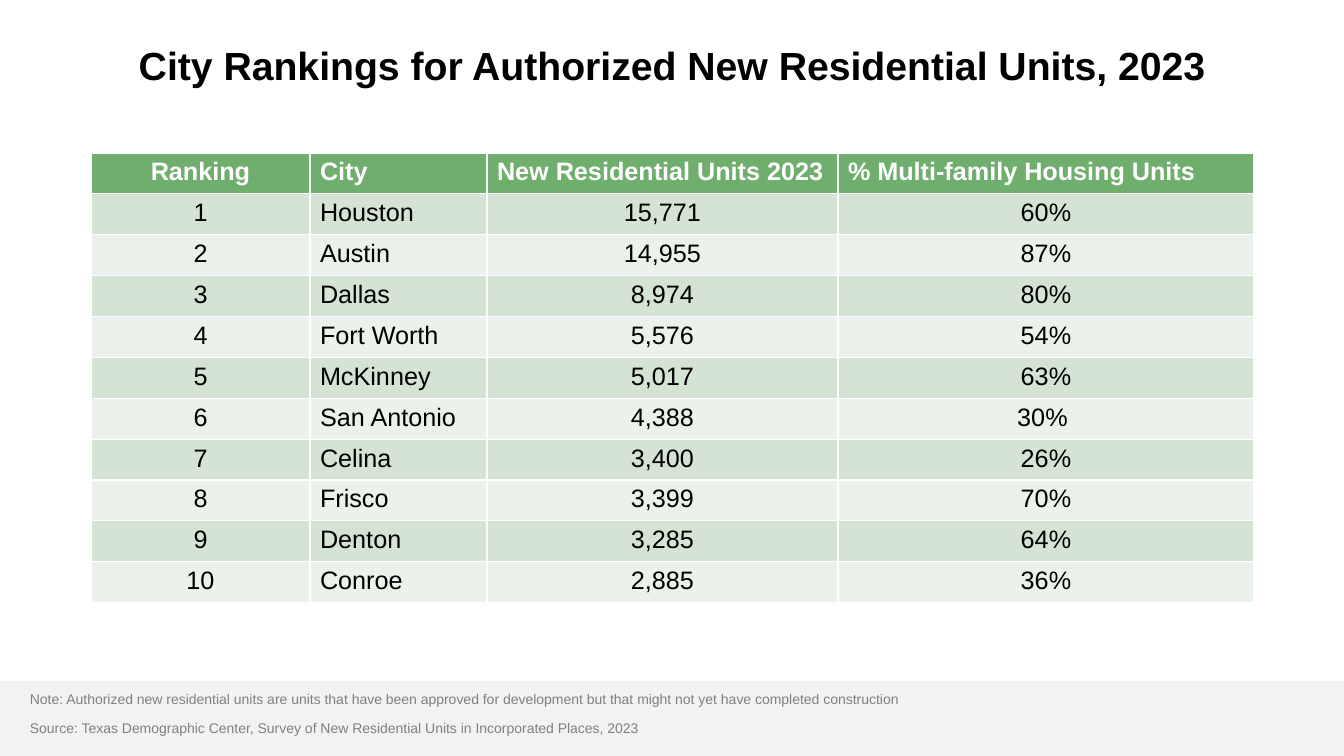
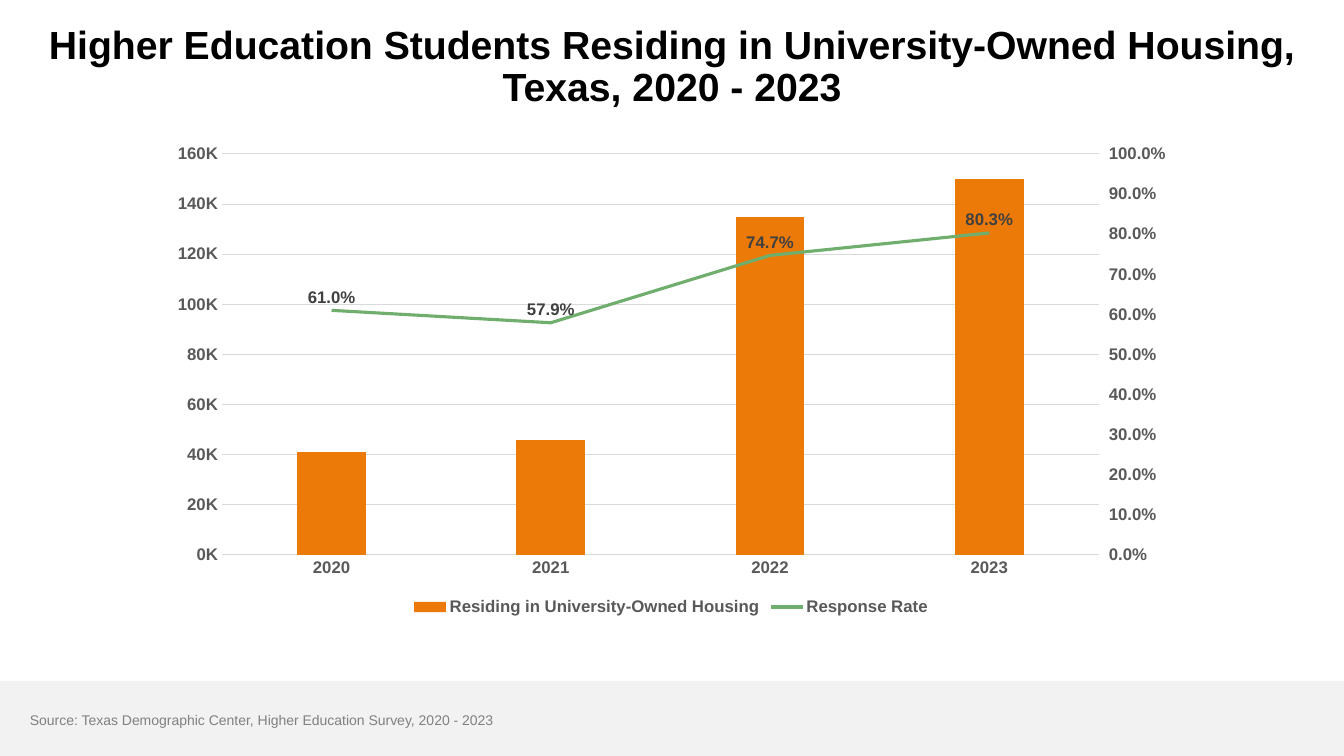
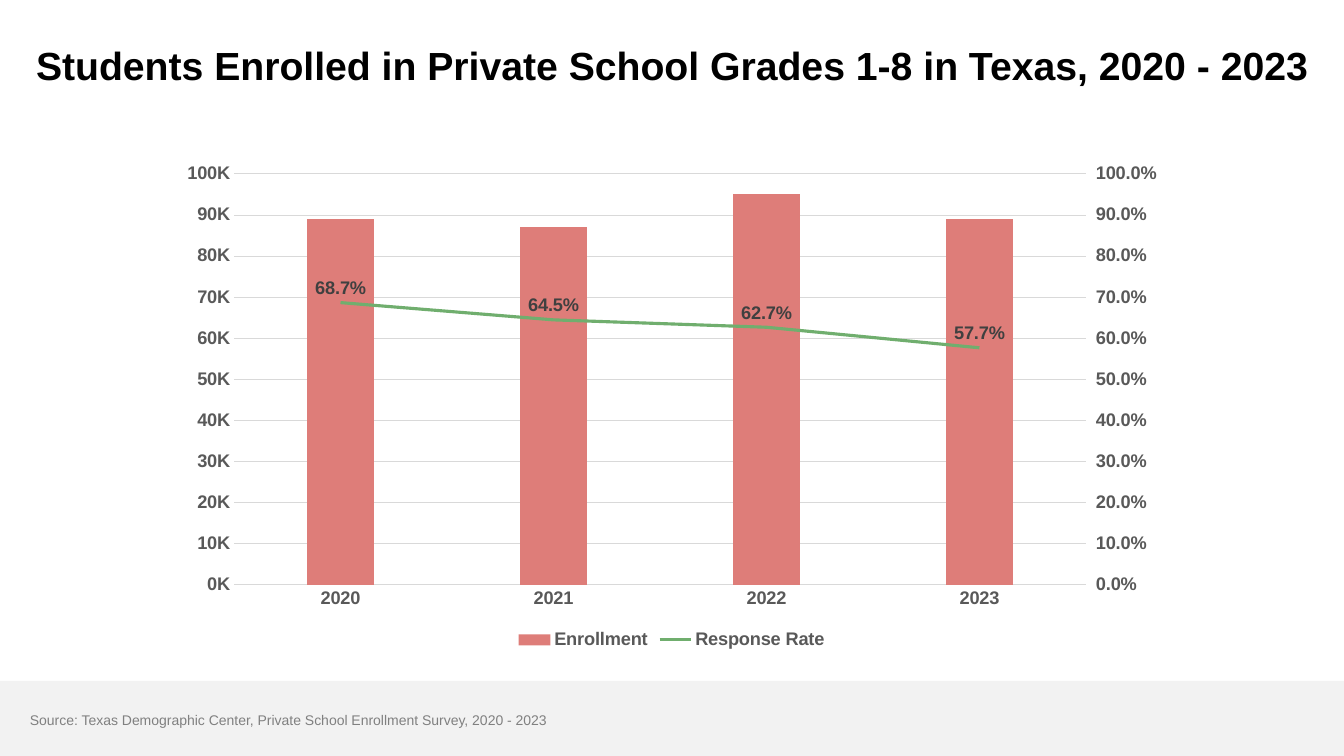
from copy import deepcopy

from lxml import etree
from pptx import Presentation
from pptx.chart.axis import CategoryAxis, ValueAxis
from pptx.chart.data import CategoryChartData
from pptx.dml.color import RGBColor
from pptx.enum.chart import (XL_CHART_TYPE, XL_LABEL_POSITION, XL_LEGEND_POSITION,
                             XL_MARKER_STYLE, XL_TICK_MARK)
from pptx.enum.shapes import MSO_SHAPE
from pptx.enum.text import MSO_ANCHOR, PP_ALIGN
from pptx.oxml import parse_xml
from pptx.oxml.ns import nsdecls, qn
from pptx.util import Pt

WIDE, HIGH = 1344, 756
SCALE = 12192000 / WIDE
FONT = "Arial"
BLACK, WHITE, GREY, DARK, RULE = "000000", "FFFFFF", "595959", "404040", "D9D9D9"
BAND, NOTE = "F2F2F2", "808080"
GREEN, ORANGE, ROSE = "70AE6E", "EC7A08", "DE7D79"
ROWS = ("D5E3D5", "EBF2EB")
LEFT, CENTER = PP_ALIGN.LEFT, PP_ALIGN.CENTER
MIDDLE, RECT = MSO_ANCHOR.MIDDLE, MSO_SHAPE.RECTANGLE
BARS, ABOVE, BELOW = (XL_CHART_TYPE.COLUMN_CLUSTERED, XL_LABEL_POSITION.ABOVE,
                      XL_LEGEND_POSITION.BOTTOM)
NONE, OUT, BARE = XL_TICK_MARK.NONE, XL_TICK_MARK.OUTSIDE, XL_MARKER_STYLE.NONE

TITLE_BOX = (0, 13, WIDE, 110)
BAND_BOX = (0, 681, WIDE, 75)
YEARS = ("2020", "2021", "2022", "2023")
HEADS = ("Ranking", "City", "New Residential Units 2023", "% Multi-family Housing Units")
COLS = (219, 177, 351, 416)
CITIES = (
    ("Houston", "15,771", "60%"),
    ("Austin", "14,955", "87%"),
    ("Dallas", "8,974", "80%"),
    ("Fort Worth", "5,576", "54%"),
    ("McKinney", "5,017", "63%"),
    ("San Antonio", "4,388", "30% "),
    ("Celina", "3,400", "26%"),
    ("Frisco", "3,399", "70%"),
    ("Denton", "3,285", "64%"),
    ("Conroe", "2,885", "36%"),
)


def px(*nums):
    """Turn px lengths into EMU."""
    return [round(num * SCALE) for num in nums]


def rgb(code):
    """Turn a hex string into a colour."""
    return RGBColor.from_string(code)


def style(font, size, color, bold=True):
    """Set the face, size, colour and weight of a font."""
    font.name, font.size, font.bold = FONT, Pt(size), bold
    font.color.rgb = rgb(color)


def write(frame, *lines, size, color, bold=False, align=LEFT, lead=None, gap=0):
    """Fill a text frame with one paragraph per line."""
    for rank, line in enumerate(lines):
        para = frame.add_paragraph() if rank else frame.paragraphs[0]
        para.alignment = align
        if lead:
            para.line_spacing = lead
        if rank and gap:
            para.space_before = Pt(gap)
        run = para.add_run()
        run.text = line
        style(run.font, size, color, bold)


def label(slide, box, *lines, **form):
    """Place a wrapped, middle-anchored text box."""
    frame = slide.shapes.add_textbox(*px(*box)).text_frame
    frame.word_wrap = True
    frame.vertical_anchor = MIDDLE
    write(frame, *lines, lead=0.9, **form)


def base(deck, title, *notes):
    """Add a slide with its title, footer band and notes."""
    slide = deck.slides.add_slide(deck.slide_layouts[6])
    band = slide.shapes.add_shape(RECT, *px(*BAND_BOX))
    band.shadow.inherit = False
    band.fill.solid()
    band.fill.fore_color.rgb = rgb(BAND)
    band.line.fill.background()
    box = (20, 684, 1043, 61) if len(notes) > 1 else (20, 700, 1043, 41)
    label(slide, box, *notes, size=10, color=NOTE, gap=10)
    label(slide, TITLE_BOX, title, size=28, color=BLACK, bold=True, align=CENTER)
    return slide


def ranks(slide, box):
    """Place the table of ranked cities."""
    data = [HEADS] + [(str(num), *city) for num, city in enumerate(CITIES, 1)]
    table = slide.shapes.add_table(len(data), len(COLS), *px(*box)).table
    for col, width in zip(table.columns, COLS):
        col.width = px(width)[0]
    for row, texts in enumerate(data):
        table.rows[row].height = px(box[3] / len(data))[0]
        head = row == 0
        for col, text in enumerate(texts):
            cell = table.cell(row, col)
            cell.fill.solid()
            cell.fill.fore_color.rgb = rgb(GREEN if head else ROWS[(row - 1) % 2])
            side = CENTER if col == 0 or (col > 1 and not head) else LEFT
            write(cell.text_frame, text, size=18, bold=head, align=side,
                  color=WHITE if head else BLACK)


def scale(axis, top, step, form, size, tick):
    """Format a value axis that starts at zero."""
    axis.minimum_scale, axis.maximum_scale, axis.major_unit = 0, top, step
    axis.major_tick_mark, axis.minor_tick_mark = tick, NONE
    axis.format.line.fill.background()
    axis.tick_labels.number_format = form
    axis.tick_labels.number_format_is_linked = False
    style(axis.tick_labels.font, size, GREY)


def split(chart):
    """Move the second series to a line on a right axis, which is returned."""
    bars = chart.plots[0]._element
    area = bars.getparent()
    cat, val = area.find(qn("c:catAx")), area.find(qn("c:valAx"))
    ser = bars.findall(qn("c:ser"))[1]
    for flag in ser.findall(qn("c:invertIfNegative")):
        ser.remove(flag)
    line = parse_xml(
        f'<c:lineChart {nsdecls("c")}><c:grouping val="standard"/><c:varyColors val="0"/>'
        '<c:marker val="1"/><c:axId val="501"/><c:axId val="502"/></c:lineChart>')
    line.insert(2, ser)
    bars.addnext(line)
    far, right = deepcopy(cat), deepcopy(val)
    for axis, own, other in ((far, "501", "502"), (right, "502", "501")):
        axis.find(qn("c:axId")).set("val", own)
        axis.find(qn("c:crossAx")).set("val", other)
    val.addnext(right)
    right.addnext(far)
    right.find(qn("c:axPos")).set("val", "r")
    right.find(qn("c:crosses")).set("val", "max")
    CategoryAxis(far).visible = False
    axis = ValueAxis(right)
    axis.has_major_gridlines = False
    return axis


def frame(chart, box, plot):
    """Fix the inner plot area at a px box on the slide."""
    area = chart.plots[0]._element.getparent()
    for old in area.findall(qn("c:layout")):
        area.remove(old)
    spots = ((plot[0] - box[0]) / box[2], (plot[1] - box[1]) / box[3],
             plot[2] / box[2], plot[3] / box[3])
    layout = etree.Element(qn("c:layout"))
    hand = etree.SubElement(layout, qn("c:manualLayout"))
    marks = [("layoutTarget", "inner"), ("xMode", "edge"), ("yMode", "edge")]
    marks += [(tag, f"{spot:.4f}") for tag, spot in zip("xywh", spots)]
    for tag, mark in marks:
        etree.SubElement(hand, qn(f"c:{tag}")).set("val", mark)
    area.insert(0, layout)


def combo(slide, box, plot, name, counts, rates, color, size, top, step):
    """Place a chart of yearly counts as bars and response rates as a line."""
    data = CategoryChartData()
    data.categories = YEARS
    data.add_series(name, counts, '0,"K"')
    data.add_series("Response Rate", rates, "0.0%")
    chart = slide.shapes.add_chart(BARS, *px(*box), data).chart
    style(chart.font, 10, BLACK, False)
    chart.has_title = False
    chart.has_legend = True
    chart.legend.position = BELOW
    chart.legend.include_in_layout = False
    style(chart.legend.font, size, GREY)
    years = chart.category_axis
    years.major_tick_mark = years.minor_tick_mark = NONE
    left = chart.value_axis
    left.has_major_gridlines = True
    for line in (years.format.line, left.major_gridlines.format.line):
        line.color.rgb = rgb(RULE)
        line.width = Pt(0.75)
    style(years.tick_labels.font, size, GREY)
    right = split(chart)
    scale(left, top, step, '0,"K"', size, NONE)
    scale(right, 1, 0.1, "0.0%", size, OUT)
    bars, trend = chart.plots
    bars.vary_by_categories = False
    bars.gap_width = 219
    fill = bars.series[0].format.fill
    fill.solid()
    fill.fore_color.rgb = rgb(color)
    rate = trend.series[0]
    rate.smooth = False
    rate.marker.style = BARE
    rate.format.line.color.rgb = rgb(GREEN)
    rate.format.line.width = Pt(2.25)
    tags = rate.data_labels
    tags.show_value = True
    tags.position = ABOVE
    tags.number_format = "0.0%"
    tags.number_format_is_linked = False
    style(tags.font, size, DARK)
    frame(chart, box, plot)


def main():
    """Build and save the deck."""
    deck = Presentation()
    deck.slide_width, deck.slide_height = px(WIDE, HIGH)
    slide = base(
        deck, "City Rankings for Authorized New Residential Units, 2023",
        "Note: Authorized new residential units are units that have been approved for "
        "development but that might not yet have completed construction",
        "Source: Texas Demographic Center, Survey of New Residential Units in "
        "Incorporated Places, 2023")
    ranks(slide, (91, 153, sum(COLS), 450))
    slide = base(
        deck, "Higher Education Students Residing in University-Owned Housing, "
        "Texas, 2020 - 2023",
        "Source: Texas Demographic Center, Higher Education Survey, 2020 - 2023")
    combo(slide, (157, 136, 1028, 484), (222, 154, 877, 401),
          "Residing in University-Owned Housing", (41000, 46000, 135000, 150000),
          (0.61, 0.579, 0.747, 0.803), ORANGE, 12, 160000, 20000)
    slide = base(
        deck, "Students Enrolled in Private School Grades 1-8 in Texas, 2020 - 2023",
        "Source: Texas Demographic Center, Private School Enrollment Survey, 2020 - 2023")
    combo(slide, (166, 154, 1011, 500), (234, 174, 852, 411),
          "Enrollment", (89000, 87000, 95000, 89000),
          (0.687, 0.645, 0.627, 0.577), ROSE, 13, 100000, 10000)
    deck.save("out.pptx")


if __name__ == "__main__":
    main()
